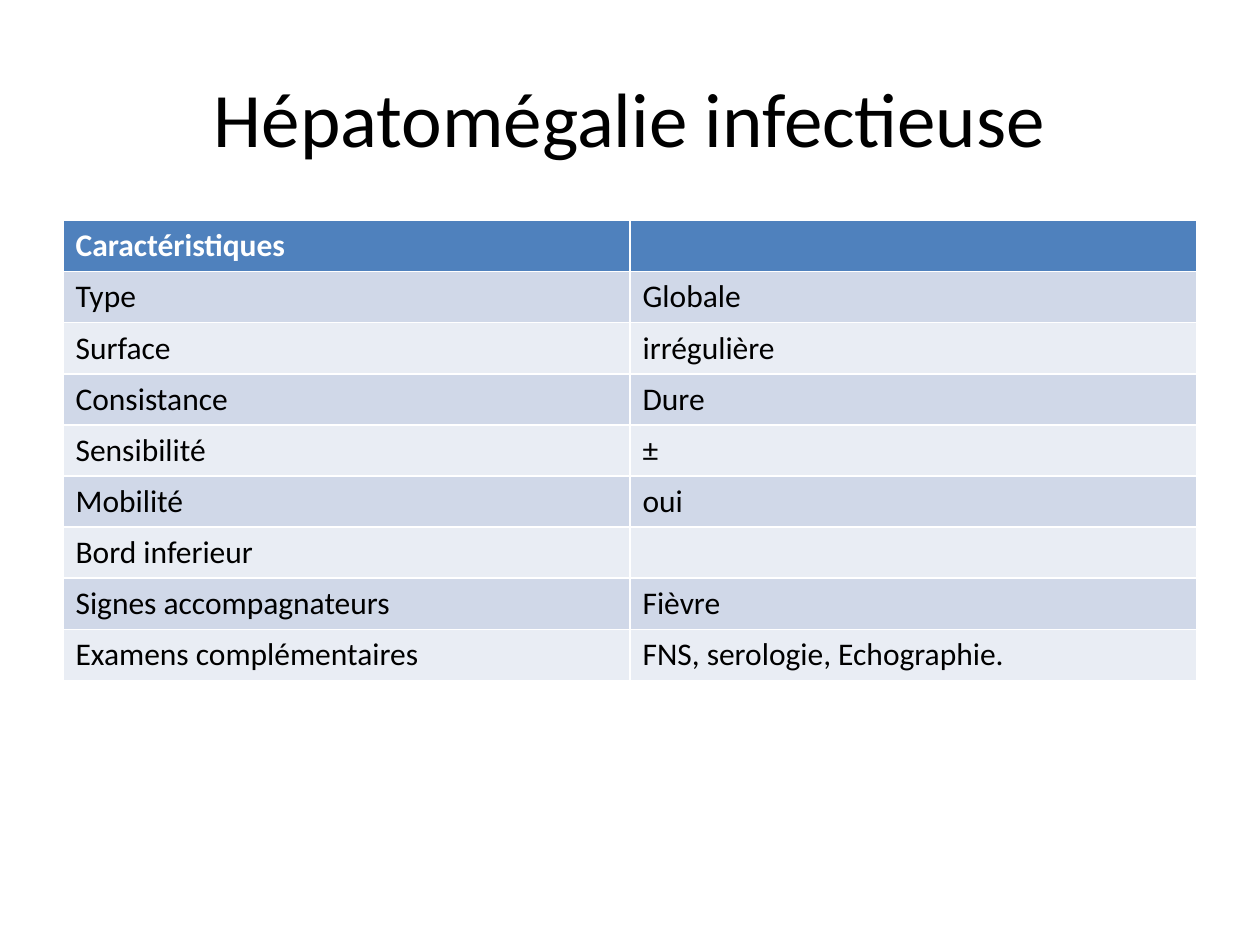
import pptx
import pptx.dml.color
import pptx.enum.text
import pptx.util
from dataclasses import dataclass

Pt = pptx.util.Pt
RGB = pptx.dml.color.RGBColor.from_string


@dataclass(frozen=True)
class Theme:
    font: str = "Calibri"
    title_size: int = 44
    table_size: int = 18
    text: str = "000000"
    header_text: str = "FFFFFF"
    header_fill: str = "4F81BD"
    bands: tuple = ("D0D8E8", "E9EDF4")


theme = Theme()


def style_paragraph(paragraph, size, color, bold=False):
    paragraph.font.name = theme.font
    paragraph.font.size = Pt(size)
    paragraph.font.bold = bold
    paragraph.font.color.rgb = RGB(color)


characteristics = [
    ("Caractéristiques", ""),
    ("Type", "Globale"),
    ("Surface", "irrégulière"),
    ("Consistance", "Dure"),
    ("Sensibilité", "±"),
    ("Mobilité", "oui"),
    ("Bord inferieur", ""),
    ("Signes accompagnateurs", "Fièvre"),
    ("Examens complémentaires", "FNS, serologie, Echographie."),
]

presentation = pptx.Presentation()
presentation.slide_width = Pt(720)
presentation.slide_height = Pt(540)
slide = presentation.slides.add_slide(presentation.slide_layouts[5])

heading = slide.shapes.title
heading.left, heading.top, heading.width, heading.height = Pt(36), Pt(21.6), Pt(648), Pt(90)
heading.text_frame.text = "Hépatomégalie infectieuse"
heading.text_frame.vertical_anchor = pptx.enum.text.MSO_ANCHOR.MIDDLE
heading.text_frame.paragraphs[0].alignment = pptx.enum.text.PP_ALIGN.CENTER
style_paragraph(heading.text_frame.paragraphs[0], theme.title_size, theme.text)

# The default table style supplies the white rules and the thicker one under the header.
row_height = 29.2
findings = slide.shapes.add_table(
    len(characteristics), 2, Pt(36), Pt(126), Pt(648), Pt(row_height * len(characteristics))
).table
for row_index, values in enumerate(characteristics):
    findings.rows[row_index].height = Pt(row_height)
    is_header = row_index == 0
    fill = theme.header_fill if is_header else theme.bands[(row_index - 1) % 2]
    color = theme.header_text if is_header else theme.text
    for column_index, value in enumerate(values):
        cell = findings.cell(row_index, column_index)
        cell.fill.solid()
        cell.fill.fore_color.rgb = RGB(fill)
        if value:
            cell.text = value
        style_paragraph(cell.text_frame.paragraphs[0], theme.table_size, color, is_header)

presentation.save("out.pptx")
